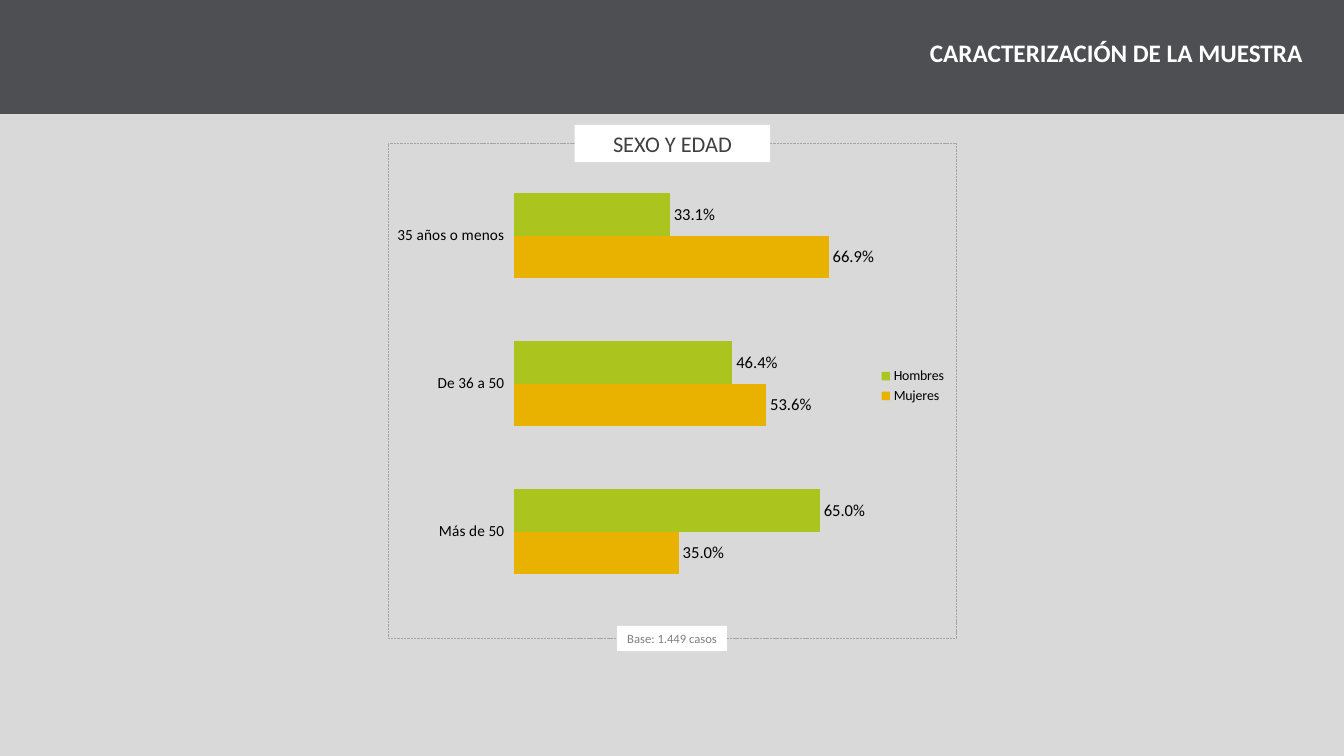
"""Build the sample profile slide: sex by age group."""
from lxml import etree
from pptx import Presentation
from pptx.chart.data import CategoryChartData
from pptx.dml.color import RGBColor
from pptx.enum.chart import XL_CHART_TYPE, XL_LABEL_POSITION, XL_LEGEND_POSITION, XL_TICK_MARK
from pptx.enum.dml import MSO_LINE
from pptx.enum.shapes import MSO_SHAPE
from pptx.enum.text import MSO_ANCHOR, PP_ALIGN
from pptx.oxml.ns import qn
from pptx.util import Inches, Pt

RECTANGLE = MSO_SHAPE.RECTANGLE
BARS = XL_CHART_TYPE.BAR_CLUSTERED
OUTSIDE_END = XL_LABEL_POSITION.OUTSIDE_END
LEGEND_RIGHT = XL_LEGEND_POSITION.RIGHT
TICK_CROSS = XL_TICK_MARK.CROSS
SHORT_DASH = MSO_LINE.SQUARE_DOT
MIDDLE = MSO_ANCHOR.MIDDLE
CENTER, RIGHT = PP_ALIGN.CENTER, PP_ALIGN.RIGHT

FONT = "Calibri"
COLORS = {
    "page": "D9D9D9", "band": "4D4F53", "white": "FFFFFF", "frame": "A6A6A6",
    "heading": "404040", "base": "808080", "black": "000000",
    "Mujeres": "EAB200", "Hombres": "ACC41E",
}
TITLE = "CARACTERIZACIÓN DE LA MUESTRA"
TAGS = [
    ("Base: 1.449 casos", (6.12, 6.21, 1.09, 0.25), 9, "base", False),
    ("SEXO Y EDAD", (5.7, 1.24, 1.94, 0.37), 16, "heading", True),
]
AGES = ["Más de 50", "De 36 a 50", "35 años o menos"]
SHARES = {"Mujeres": (0.35, 0.536, 0.669), "Hombres": (0.65, 0.464, 0.331)}
PLOT_LAYOUT = {
    "layoutTarget": "inner", "xMode": "edge", "yMode": "edge",
    "x": 0.2, "y": 0.02, "w": 0.68, "h": 0.95,
}


def color(name):
    return RGBColor.from_string(COLORS[name])


def style_font(font, size, name, bold=False):
    font.name, font.size, font.bold = FONT, Pt(size), bold
    font.color.rgb = color(name)


def add_box(page, area, fill=None):
    box = page.shapes.add_shape(RECTANGLE, *map(Inches, area))
    box.shadow.inherit = False
    box.line.fill.background()
    if fill:
        box.fill.solid()
        box.fill.fore_color.rgb = color(fill)
    else:
        box.fill.background()
    return box


def add_tag(page, text, area, size, name, wrap):
    frame = add_box(page, area, "white").text_frame
    frame.text = text
    frame.word_wrap = wrap
    frame.vertical_anchor = MIDDLE
    para = frame.paragraphs[0]
    para.alignment = CENTER
    style_font(para.runs[0].font, size, name)


def add_title(page):
    title = page.shapes.title
    title.left, title.top, title.width, title.height = map(Inches, (6.12, 0.35, 6.8, 0.4))
    title.element.addprevious(add_box(page, (0, 0, 13.33, 1.13), "band").element)
    frame = title.text_frame
    frame.text = TITLE
    frame.word_wrap = True
    frame.vertical_anchor = MIDDLE
    frame.margin_left = frame.margin_right = 0
    frame.margin_top = frame.margin_bottom = Inches(0.08)
    para = frame.paragraphs[0]
    para.alignment = RIGHT
    para.line_spacing = Pt(17)
    style_font(para.runs[0].font, 18, "white", True)


def place_plot(chart):
    plot_area = chart.element.find(f".//{qn('c:plotArea')}")
    for old_layout in plot_area.findall(qn("c:layout")):
        plot_area.remove(old_layout)
    layout = etree.Element(qn("c:layout"))
    manual = etree.SubElement(layout, qn("c:manualLayout"))
    for tag, value in PLOT_LAYOUT.items():
        etree.SubElement(manual, qn(f"c:{tag}")).set("val", str(value))
    plot_area.insert(0, layout)


def add_share_chart(page):
    data = CategoryChartData(number_format="0.00%")
    data.categories = AGES
    for name, values in SHARES.items():
        data.add_series(name, values)
    area = map(Inches, (3.94, 1.51, 5.55, 4.64))
    chart = page.shapes.add_chart(BARS, *area, data).chart
    chart.has_title = False
    style_font(chart.font, 18, "black")

    ages = chart.category_axis
    ages.major_tick_mark = TICK_CROSS
    ages.format.line.fill.background()
    style_font(ages.tick_labels.font, 11, "black")
    shares = chart.value_axis
    shares.minimum_scale, shares.maximum_scale = 0, 0.8
    shares.has_major_gridlines = False
    shares.visible = False

    chart.has_legend = True
    chart.legend.position = LEGEND_RIGHT
    chart.legend.include_in_layout = False
    style_font(chart.legend.font, 10, "black")

    plot = chart.plots[0]
    plot.gap_width, plot.overlap = 150, 0
    plot.vary_by_categories = False
    for series in plot.series:
        series.format.fill.solid()
        series.format.fill.fore_color.rgb = color(series.name)
        labels = series.data_labels
        labels.show_value = True
        labels.number_format = "0.0%"
        labels.number_format_is_linked = False
        labels.position = OUTSIDE_END
        style_font(labels.font, 12, "black")
    place_plot(chart)


def main():
    deck = Presentation()
    deck.slide_width, deck.slide_height = Inches(13.33), Inches(7.5)
    page = deck.slides.add_slide(deck.slide_layouts[5])
    page.background.fill.solid()
    page.background.fill.fore_color.rgb = color("page")

    add_title(page)
    add_share_chart(page)
    outline = add_box(page, (3.85, 1.42, 5.63, 4.91)).line
    outline.color.rgb = color("frame")
    outline.width = Pt(0.25)
    outline.dash_style = SHORT_DASH
    for tag in TAGS:
        add_tag(page, *tag)
    deck.save("out.pptx")


if __name__ == "__main__":
    main()
